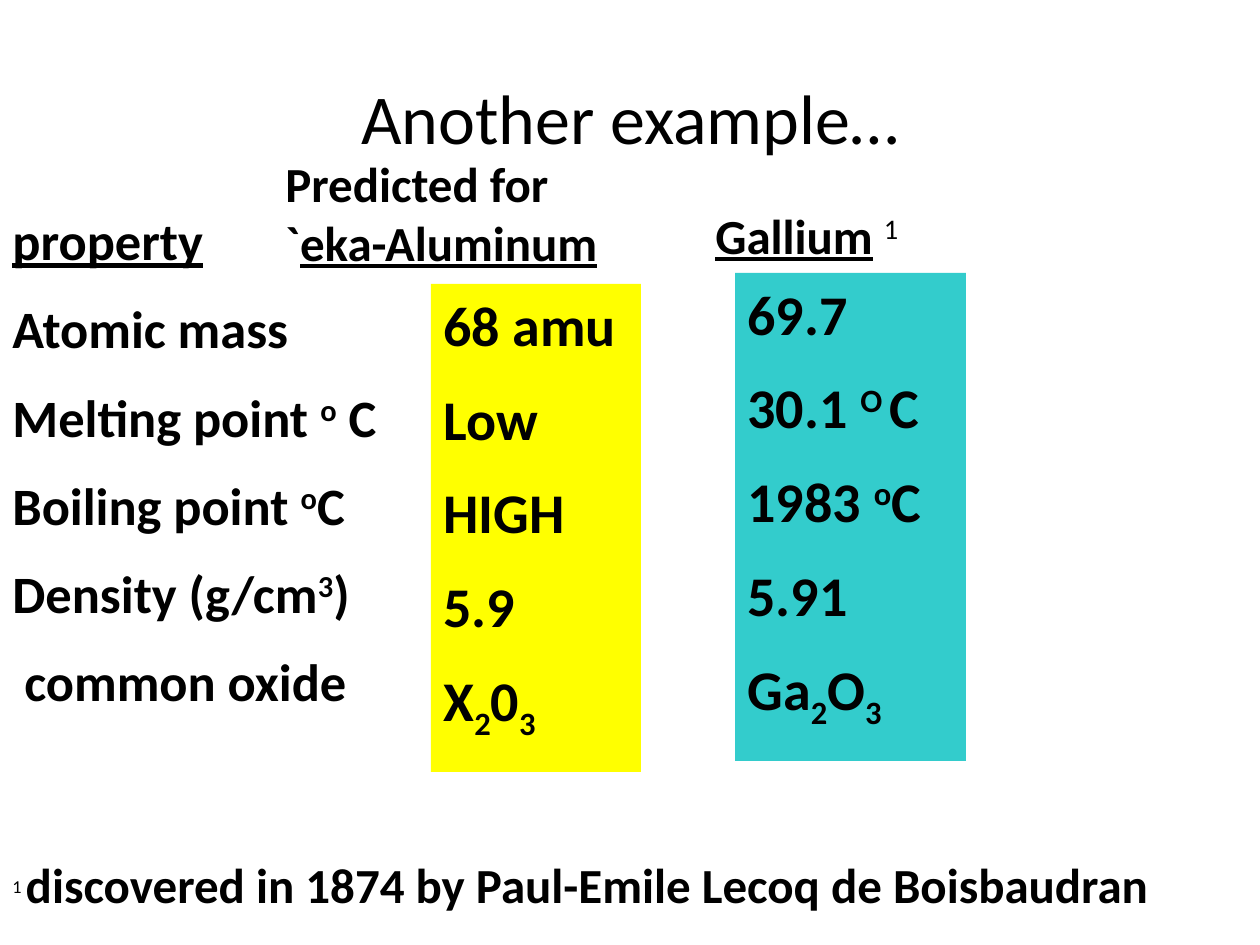
"""Build a slide comparing predicted eka-aluminum with gallium."""
from pptx import Presentation
from pptx.dml.color import RGBColor as RGB
from pptx.enum.shapes import MSO_SHAPE as Shape
from pptx.enum.text import MSO_ANCHOR as Anchor, PP_ALIGN as Align
from pptx.util import Emu, Pt

BLACK = RGB(0, 0, 0)
YELLOW = RGB(0xFF, 0xFF, 0)
TEAL = RGB(0x33, 0xCC, 0xCC)
FONT = "Calibri"
SHIFTS = {"^": "30000", "_": "-25000"}

LABELS = [
    [("property", {"under": True})],
    ["Atomic mass"],
    ["Melting point ", "^o", " C"],
    ["Boiling point ", "^o", "C"],
    ["Density (g/cm", "^3", ")"],
    [" common oxide"],
]
GUESSES = [["68 amu"], ["Low"], ["HIGH"], ["5.9"], ["X", "_2", "0", "_3"]]
FACTS = [
    ["69.7"],
    ["30.1 ", "^O ", "C"],
    ["1983 ", "^o", "C"],
    ["5.91"],
    ["Ga", "_2", "O", "_3"],
]
PLAIN = {"bold": False}
GALLIUM = [[("Gallium", {"under": True}), (" ", PLAIN), ("^1", PLAIN)]]
EKA = [["Predicted for"], ["`", ("eka-Aluminum", {"under": True})]]
NOTE = [[("^1 ", {"size": 18, "bold": False}),
         "discovered in 1874 by Paul-Emile Lecoq de Boisbaudran"]]


def px(count):
    """Turn pixels into EMU."""
    return Emu(round(count * 914400 / 126))


def place(shape, box):
    """Set the left, top, width and height of a shape."""
    shape.left, shape.top, shape.width, shape.height = map(px, box)


def add_run(para, text, size, bold=True, under=False):
    """Add a run; a leading ^ raises it and _ lowers it."""
    run = para.add_run()
    shift = SHIFTS.get(text[0])
    run.text = text[1:] if shift else text
    font = run.font
    font.name, font.size, font.bold = FONT, Pt(size), bold
    font.underline = under
    font.color.rgb = BLACK
    if shift:
        run._r.get_or_add_rPr().set("baseline", shift)


def write(shape, lines, size, gap=0, align=Align.LEFT, anchor=Anchor.TOP, **style):
    """Fill a shape with lines, each a list of plain or styled parts."""
    frame = shape.text_frame
    frame.word_wrap = True
    frame.vertical_anchor = anchor
    for i, line in enumerate(lines):
        para = frame.add_paragraph() if i else frame.paragraphs[0]
        para.alignment = align
        para.space_before = Pt(gap)
        for part in line:
            text, extra = (part, {}) if isinstance(part, str) else part
            add_run(para, text, **{"size": size, **style, **extra})


def add_text(slide, box, lines, size, gap=0):
    """Add a text box."""
    write(slide.shapes.add_textbox(*map(px, box)), lines, size, gap)


def add_panel(slide, box, lines, fill):
    """Add a filled rectangle holding a column of values."""
    panel = slide.shapes.add_shape(Shape.RECTANGLE, *map(px, box))
    panel.shadow.inherit = False
    panel.fill.solid()
    panel.fill.fore_color.rgb = fill
    panel.line.fill.background()
    write(panel, lines, 32, 15.2)


def main():
    """Build and save the slide."""
    deck = Presentation()
    deck.slide_width, deck.slide_height = px(1260), px(945)
    slide = deck.slides.add_slide(deck.slide_layouts[5])
    title = slide.shapes.title
    place(title, (63, 38, 1134, 158))
    write(title, [["Another example…"]], 40, align=Align.CENTER,
          anchor=Anchor.MIDDLE, bold=False)
    add_text(slide, (0, 202, 410, 653), LABELS, 30, 14.4)
    add_panel(slide, (431, 284, 210, 488), GUESSES, YELLOW)
    add_text(slide, (703, 199, 305, 72), GALLIUM, 28)
    add_text(slide, (273, 147, 451, 131), EKA, 28)
    add_panel(slide, (735, 273, 231, 488), FACTS, TEAL)
    add_text(slide, (0, 848, 1260, 72), NOTE, 28)
    deck.save("out.pptx")


if __name__ == "__main__":
    main()
